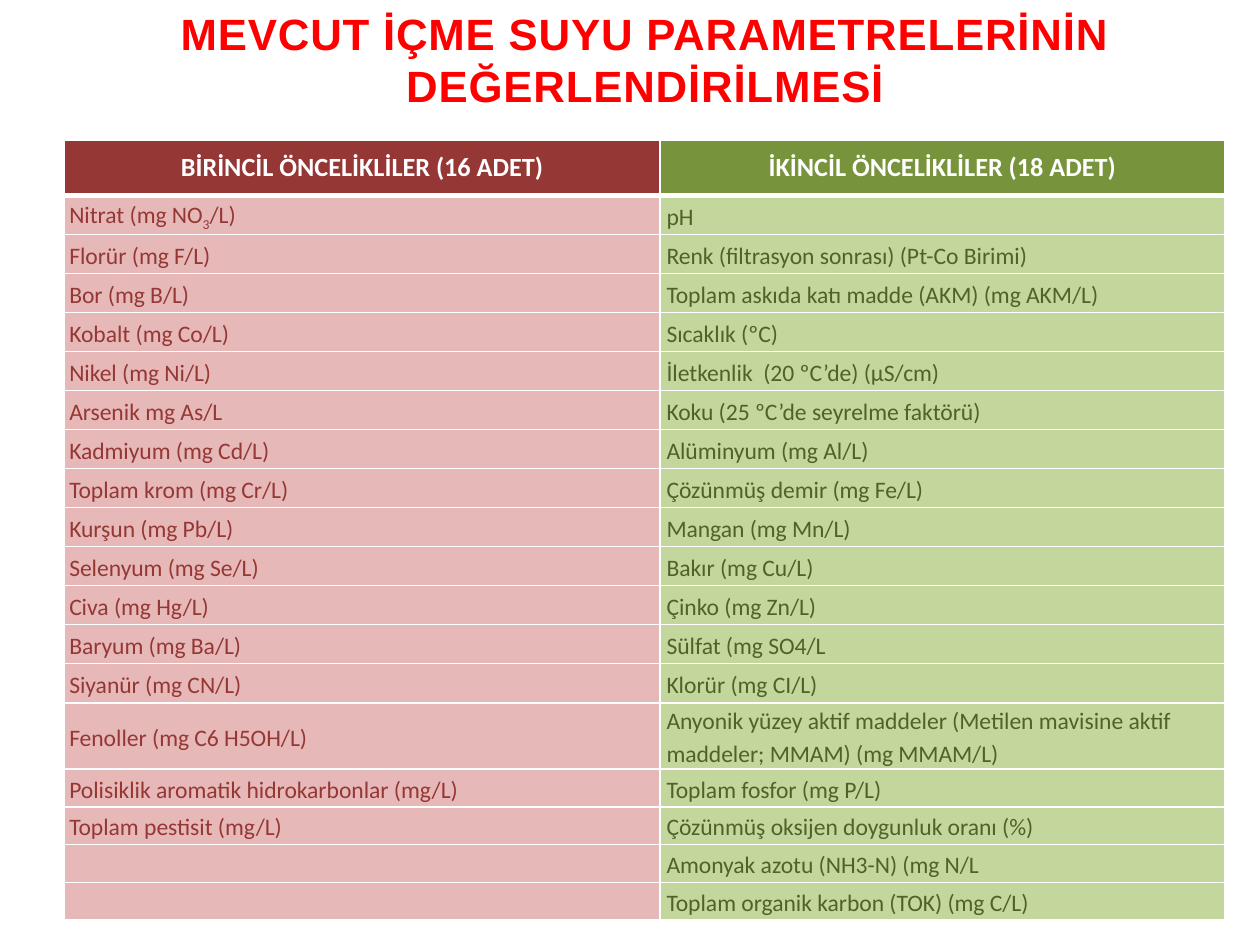
"""Build a slide comparing first and second priority drinking water parameters."""
from lxml.etree import SubElement
from pptx import Presentation
from pptx.dml.color import RGBColor
from pptx.enum.text import MSO_ANCHOR, MSO_AUTO_SIZE, PP_ALIGN
from pptx.oxml import parse_xml
from pptx.oxml.ns import nsdecls, qn
from pptx.util import Inches, Pt

COLORS = {
    "title": "FF0000",
    "white": "FFFFFF",
    "header": ["953735", "77933C"],
    "body": ["E6B9B8", "C3D69B"],
    "text": ["953735", "4F6228"],
}
HEADERS = ["BİRİNCİL ÖNCELİKLİLER (16 ADET)", "İKİNCİL ÖNCELİKLİLER (18 ADET)"]
PARAMETERS = [
    ("Nitrat (mg NO|3|/L)", "pH"),
    ("Florür (mg F/L)", "Renk (filtrasyon sonrası) (Pt-Co Birimi)"),
    ("Bor (mg B/L)", "Toplam askıda katı madde (AKM) (mg AKM/L)"),
    ("Kobalt (mg Co/L)", "Sıcaklık (ºC)"),
    ("Nikel (mg Ni/L)", "İletkenlik  (20 ºC’de) (μS/cm)"),
    ("Arsenik mg As/L", "Koku (25 ºC’de seyrelme faktörü)"),
    ("Kadmiyum (mg Cd/L)", "Alüminyum (mg Al/L)"),
    ("Toplam krom (mg Cr/L)", "Çözünmüş demir (mg Fe/L)"),
    ("Kurşun (mg Pb/L)", "Mangan (mg Mn/L)"),
    ("Selenyum (mg Se/L)", "Bakır (mg Cu/L)"),
    ("Civa (mg Hg/L)", "Çinko (mg Zn/L)"),
    ("Baryum (mg Ba/L)", "Sülfat (mg SO4/L"),
    ("Siyanür (mg CN/L)", "Klorür (mg CI/L)"),
    (
        "Fenoller (mg C6 H5OH/L)",
        "Anyonik yüzey aktif maddeler (Metilen mavisine aktif maddeler; MMAM) (mg MMAM/L)",
    ),
    ("Polisiklik aromatik hidrokarbonlar (mg/L)", "Toplam fosfor (mg P/L)"),
    ("Toplam pestisit (mg/L)", "Çözünmüş oksijen doygunluk oranı (%)"),
    ("", "Amonyak azotu (NH3-N) (mg N/L"),
    ("", "Toplam organik karbon (TOK) (mg C/L)"),
]
ROW_HEIGHTS = [0.44] + [0.31] * 13 + [0.32] + [0.3] * 4
COLUMN_WIDTHS = [4.73, 4.48]
SIDE_MARGINS = [0.04, 0.05]


def style_font(font, name, size, color, bold):
    font.name = name
    font.size = Pt(size)
    font.bold = bold
    font.color.rgb = RGBColor.from_string(color)


def set_borders(cell, top, bottom):
    properties = cell._tc.get_or_add_tcPr()
    widths = {"lnL": 1, "lnR": 1, "lnT": top, "lnB": bottom}
    for position, (side, width) in enumerate(widths.items()):
        properties.insert(position, parse_xml(
            f'<a:{side} {nsdecls("a")} w="{Pt(width)}"><a:solidFill>'
            f'<a:srgbClr val="{COLORS["white"]}"/></a:solidFill></a:{side}>'
        ))


presentation = Presentation()
presentation.slide_width = Inches(10)
presentation.slide_height = Inches(7.5)
slide = presentation.slides.add_slide(presentation.slide_layouts[5])

title = slide.shapes.title
title.left, title.top = Inches(1.22), Inches(0)
title.width, title.height = Inches(7.8), Inches(1.36)
title.text_frame.word_wrap = True
title.text_frame.auto_size = MSO_AUTO_SIZE.NONE
title.text_frame.vertical_anchor = MSO_ANCHOR.TOP
paragraph = title.text_frame.paragraphs[0]
paragraph.alignment = PP_ALIGN.CENTER
run = paragraph.add_run()
run.text = "MEVCUT İÇME SUYU PARAMETRELERİNİN DEĞERLENDİRİLMESİ"
run._r.get_or_add_rPr().set("spc", "50")
style_font(paragraph.font, "Arial", 25, COLORS["title"], True)

table = slide.shapes.add_table(
    len(ROW_HEIGHTS), len(COLUMN_WIDTHS),
    Inches(0.51), Inches(1.11), Inches(sum(COLUMN_WIDTHS)), Inches(sum(ROW_HEIGHTS)),
).table
for column, width in zip(table.columns, COLUMN_WIDTHS):
    column.width = Inches(width)
for row, height in zip(table.rows, ROW_HEIGHTS):
    row.height = Inches(height)

for row_index, texts in enumerate([HEADERS] + PARAMETERS):
    is_header = row_index == 0
    for column_index, text in enumerate(texts):
        cell = table.cell(row_index, column_index)
        cell.vertical_anchor = MSO_ANCHOR.MIDDLE
        set_borders(cell, 3 if row_index == 1 else 1, 3 if is_header else 1)
        cell.fill.solid()
        fill = COLORS["header" if is_header else "body"][column_index]
        cell.fill.fore_color.rgb = RGBColor.from_string(fill)
        paragraph = cell.text_frame.paragraphs[0]
        if is_header:
            paragraph.alignment = PP_ALIGN.CENTER
            style_font(paragraph.font, "Calibri", 15, COLORS["white"], True)
        else:
            cell.margin_left = cell.margin_right = Inches(SIDE_MARGINS[column_index])
            cell.margin_top = cell.margin_bottom = 0
            paragraph.line_spacing = 1.15
            style_font(paragraph.font, "Calibri", 13.5, COLORS["text"][column_index], False)
        if not text:
            SubElement(paragraph._p, qn("a:endParaRPr")).set("sz", "1350")
            continue
        for part_index, part in enumerate(text.split("|")):
            run = paragraph.add_run()
            run.text = part
            if part_index == 1:
                run._r.get_or_add_rPr().set("baseline", "-25000")

presentation.save("out.pptx")
